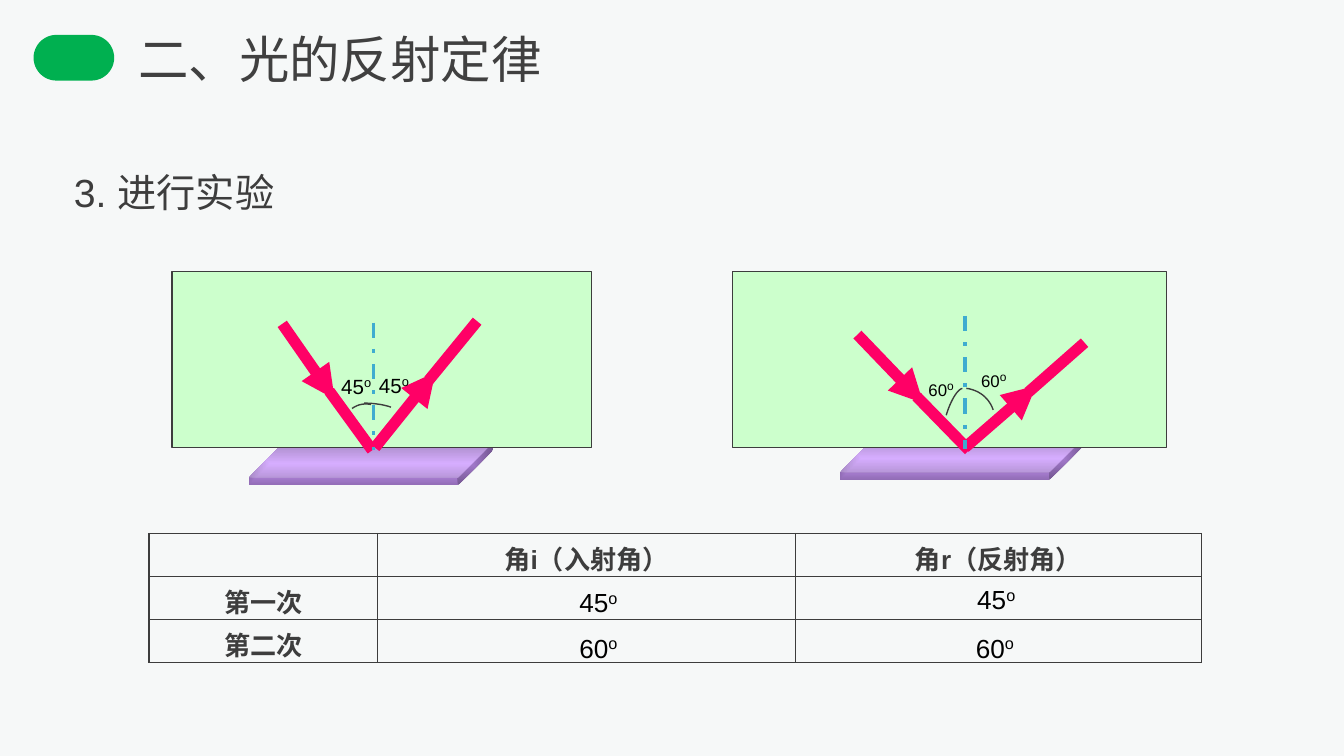
from lxml import etree
from pptx import Presentation
from pptx import util as u
from pptx.dml.color import RGBColor
from pptx.enum import dml, shapes, text
from pptx.oxml import parse_xml
from pptx.oxml.ns import nsdecls, qn

PX = 9144  # 100 px to the inch
FONT = "Arial"
PAPER = RGBColor(0xF6, 0xF8, 0xF8)
GREEN = RGBColor(0x00, 0xB0, 0x50)
BOARD = RGBColor(0xCC, 0xFF, 0xCC)
RAY = RGBColor(0xFF, 0x00, 0x66)
NORMAL = RGBColor(0x3F, 0xAC, 0xD0)
INK = RGBColor(0x3D, 0x3D, 0x3D)
TITLE = RGBColor(0x40, 0x40, 0x40)
BLACK = RGBColor(0x00, 0x00, 0x00)
MIRROR = RGBColor(0xCC, 0x99, 0xFF)
MIRROR_EDGE = RGBColor(0x92, 0x6D, 0xB6)


def px(*lengths):
    return [u.Emu(length * PX) for length in lengths]


def style(font, size, color, bold=False):
    font.name, font.size, font.bold = FONT, u.Pt(size), bold
    font.color.rgb = color


def add_preset(page, kind, at, adjust=None):
    shape = page.shapes.add_shape(kind, *px(*at))
    shape.shadow.inherit = False
    shape.line.fill.background()
    if adjust is not None:
        shape.adjustments[0] = adjust
    return shape


def add_mirror(page, left, top):
    mirror = add_preset(page, shapes.MSO_SHAPE.CUBE, (left, top, 182, 32), 0.82)
    gradient = parse_xml(
        f'<a:gradFill {nsdecls("a")} rotWithShape="1"><a:gsLst>'
        f'<a:gs pos="0"><a:srgbClr val="{MIRROR}"/></a:gs>'
        f'<a:gs pos="100000"><a:srgbClr val="{MIRROR_EDGE}"/></a:gs></a:gsLst>'
        '<a:path path="rect"><a:fillToRect l="50000" t="50000" r="50000" b="50000"/>'
        '</a:path></a:gradFill>')
    mirror._element.spPr.find(qn("a:prstGeom")).addnext(gradient)


def add_board(page, at):
    board = add_preset(page, shapes.MSO_SHAPE.RECTANGLE, at)
    board.fill.solid()
    board.fill.fore_color.rgb = BOARD
    board.line.color.rgb = INK
    board.line.width = u.Pt(0.75)


def add_line(page, start, end, color, width, arrow=False, dash=None):
    line = page.shapes.add_connector(
        shapes.MSO_CONNECTOR.STRAIGHT, *px(*start, *end))
    line.line.color.rgb = color
    line.line.width = u.Pt(width)
    if dash:
        line.line.dash_style = dash
    if arrow:
        etree.SubElement(line.line._get_or_add_ln(), qn("a:tailEnd"), type="triangle")
    etree.SubElement(line._element.spPr, qn("a:effectLst"))


def add_ray(page, arrow_part, plain_part):
    add_line(page, *arrow_part, RAY, 6, arrow=True)
    add_line(page, *plain_part, RAY, 6)


def add_arc(page, curve, steps=12):
    """Draw a cubic curve, given by its four control points."""
    points = []
    for step in range(steps + 1):
        t = step / steps
        weights = ((1 - t) ** 3, 3 * t * (1 - t) ** 2, 3 * t * t * (1 - t), t ** 3)
        points.append([sum(w * c * PX for w, c in zip(weights, axis))
                       for axis in zip(*curve)])
    builder = page.shapes.build_freeform(*points[0])
    builder.add_line_segments(points[1:], close=False)
    arc = builder.convert_to_shape()
    arc.shadow.inherit = False
    arc.fill.background()
    arc.line.color.rgb = INK
    arc.line.width = u.Pt(0.75)


def add_text(page, at, words, size, color, inset=(7, 4)):
    box = page.shapes.add_textbox(*px(*at))
    frame = box.text_frame
    frame.word_wrap = True
    frame.margin_left, frame.margin_top = px(*inset)
    frame.margin_right, frame.margin_bottom = px(*inset)
    frame.text = words
    para = frame.paragraphs[0]
    style(para.runs[0].font, size, color)
    return para


def add_degrees(page, at, value, size, sign_size, inset=(7, 4)):
    para = add_text(page, at, value, size, BLACK, inset)
    sign = para.add_run()
    sign.text = "o"
    style(sign.font, sign_size, BLACK)
    sign.font._element.set("baseline", "30000")


def add_borders(cell):
    properties = cell._tc.get_or_add_tcPr()
    for index, side in enumerate(("lnL", "lnR", "lnT", "lnB")):
        properties.insert(index, parse_xml(
            f'<a:{side} {nsdecls("a")} w="12700"><a:solidFill>'
            f'<a:srgbClr val="{INK}"/></a:solidFill></a:{side}>'))


def add_results(page, at, widths, rows):
    table = page.shapes.add_table(len(rows), len(widths), *px(*at)).table
    table.first_row = table.horz_banding = False
    for column, width in zip(table.columns, px(*widths)):
        column.width = width
    for r, row in enumerate(rows):
        table.rows[r].height = px(32)[0]
        for c, words in enumerate(row):
            cell = table.cell(r, c)
            cell.fill.background()
            add_borders(cell)
            cell.vertical_anchor = text.MSO_ANCHOR.MIDDLE
            cell.margin_top, cell.margin_bottom = px(4, 4)
            para = cell.text_frame.paragraphs[0]
            if words:
                para.text = words
                para.alignment = text.PP_ALIGN.CENTER
                para.space_before = u.Pt(2.8)
                style(para.runs[0].font, 14, INK, bold=True)
            else:
                etree.SubElement(para._p, qn("a:endParaRPr"), sz="1400")


def add_experiment(page, mirror, board, rays, normal, arcs):
    add_mirror(page, *mirror)
    add_board(page, board)
    for ray in rays:
        add_ray(page, *ray)
    add_line(page, *normal, NORMAL, 2, dash=dml.MSO_LINE.DASH_DOT)
    for arc in arcs:
        add_arc(page, arc)


def main():
    # A 16:9 page
    deck = Presentation()
    deck.slide_width = u.Inches(10)
    deck.slide_height = u.Emu(deck.slide_width * 9 // 16)
    page = deck.slides.add_slide(deck.slide_layouts[6])
    page.background.fill.solid()
    page.background.fill.fore_color.rgb = PAPER

    # Headings
    pill = add_preset(page, shapes.MSO_SHAPE.ROUNDED_RECTANGLE, (25, 26, 60, 34), 0.5)
    pill.fill.solid()
    pill.fill.fore_color.rgb = GREEN
    add_text(page, (96, 17, 344, 53), "二、光的反射定律", 27, TITLE)
    add_text(page, (48, 121, 400, 43), "3. 进行实验", 21, INK)

    # First experiment: 45 degrees
    add_experiment(
        page, (185, 329), (128, 202, 312, 131),
        rays=[(((210, 241), (249, 297)), ((245, 291), (277, 335))),
              (((279, 333), (324, 277)), ((319, 283), (355, 239)))],
        normal=((278, 240), (278, 335)),
        arcs=[((276, 301), (271, 300), (266, 301), (262, 304)),
              ((291, 303), (285, 301), (278, 300), (271, 300))])
    add_degrees(page, (244, 272, 57, 29), "45", 11, 12, inset=(10, 5))
    add_degrees(page, (275, 272, 63, 26), "45", 11, 12)

    # Second experiment: 60 degrees
    add_experiment(
        page, (625, 325), (545, 202, 323, 131),
        rays=[(((718, 333), (771, 287)), ((765, 292), (807, 255))),
              (((638, 249), (687, 300)), ((682, 295), (721, 335)))],
        normal=((718, 235), (718, 334)),
        arcs=[((716, 289), (712, 290), (707, 299), (704, 309)),
              ((739, 305), (736, 296), (728, 290), (719, 289))])
    add_degrees(page, (681, 275, 62, 25), "60", 9, 11, inset=(10, 5))
    add_degrees(page, (723, 269, 62, 23), "60", 9, 11)

    # Results, with the measured angles laid over the empty cells
    add_results(page, (111, 397, 783, 96), (170, 311, 302), [
        ("", "角i（入射角）", "角r（反射角）"),
        ("第一次", "", ""),
        ("第二次", "", "")])
    for left, top, value in ((424, 431, "45"), (720, 429, "45"),
                             (424, 465, "60"), (719, 465, "60")):
        add_degrees(page, (left, top, 62, 31), value, 14, 15)

    deck.save("out.pptx")


if __name__ == "__main__":
    main()
